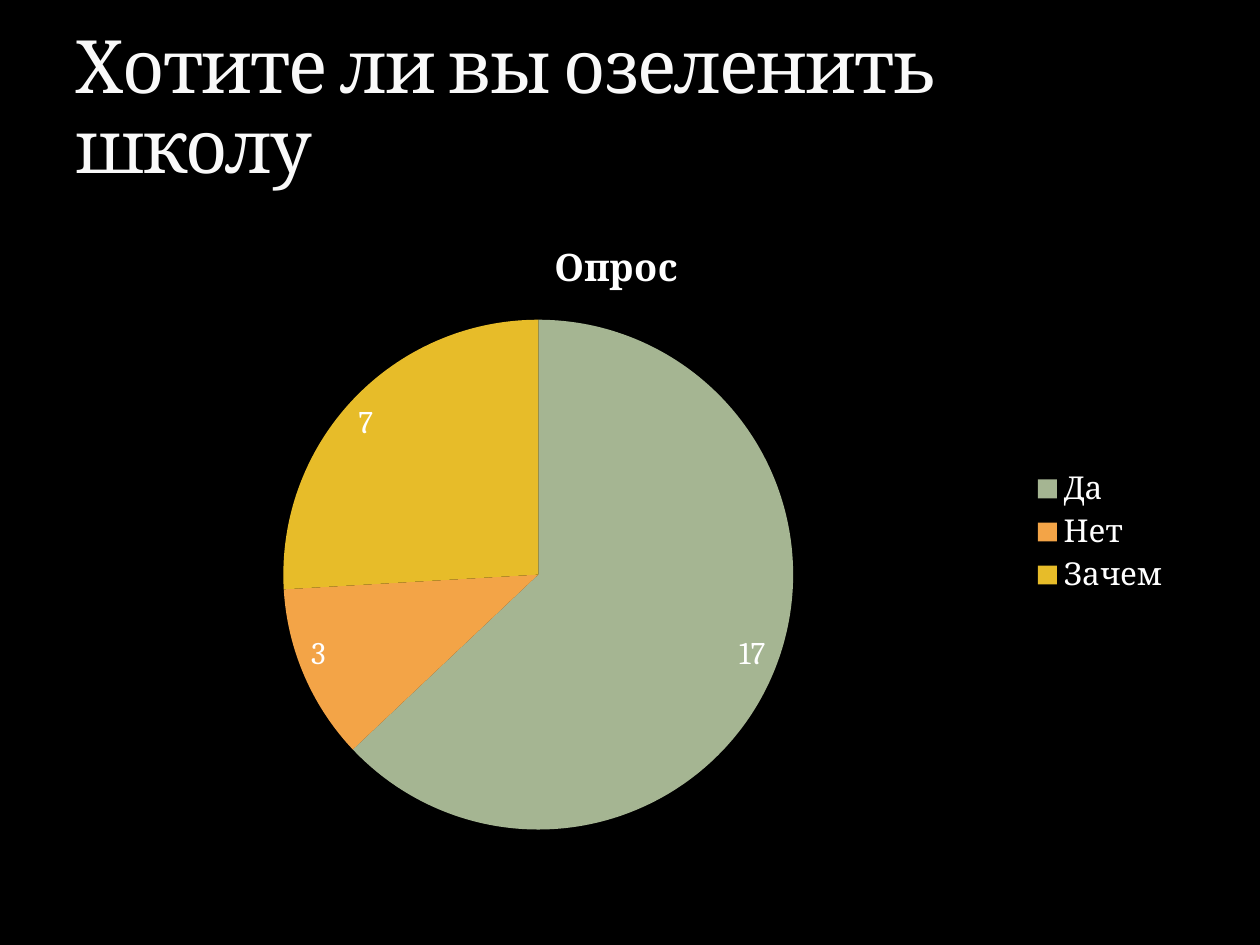
from dataclasses import dataclass

from pptx import Presentation
from pptx.chart.data import CategoryChartData
from pptx.dml.color import RGBColor
from pptx.enum.chart import XL_CHART_TYPE, XL_LABEL_POSITION, XL_LEGEND_POSITION
from pptx.enum.text import MSO_ANCHOR, MSO_AUTO_SIZE, PP_ALIGN
from pptx.util import Pt

FONT = "Cambria"
COLORS = {
    "back": "000000",
    "title": "F9F9F9",
    "text": "FFFFFF",
    "green": "A5B592",
    "orange": "F3A447",
    "gold": "E7BC29",
}


@dataclass
class Slice:
    name: str
    votes: int
    color: str


SLICES = [
    Slice("Да", 17, "green"),
    Slice("Нет", 3, "orange"),
    Slice("Зачем", 7, "gold"),
]


def rgb(name: str) -> RGBColor:
    return RGBColor.from_string(COLORS[name])


def style(font, size: float, color: str, bold: bool = False) -> None:
    font.name = FONT
    font.size = Pt(size)
    font.bold = bold
    font.color.rgb = rgb(color)


def add_title(slide, text: str) -> None:
    title = slide.shapes.title
    title.left, title.top = Pt(36), Pt(12.24)
    title.width, title.height = Pt(648), Pt(95.76)
    frame = title.text_frame
    frame.text = text
    frame.word_wrap = True
    frame.auto_size = MSO_AUTO_SIZE.NONE
    frame.vertical_anchor = MSO_ANCHOR.BOTTOM
    frame.margin_bottom = 0
    para = frame.paragraphs[0]
    para.alignment = PP_ALIGN.LEFT
    para.line_spacing = 0.9
    style(para.font, 42, "title")
    # Letter spacing is in hundredths of a point
    para.runs[0]._r.get_or_add_rPr().set("spc", "-100")


def add_pie(slide, name: str, slices: list[Slice]) -> None:
    data = CategoryChartData()
    data.categories = [part.name for part in slices]
    data.add_series(name, [part.votes for part in slices])
    chart = slide.shapes.add_chart(
        XL_CHART_TYPE.PIE, Pt(28), Pt(124), Pt(648), Pt(360), data
    ).chart
    style(chart.font, 18, "text")

    chart.has_title = True
    frame = chart.chart_title.text_frame
    frame.text = name
    style(frame.paragraphs[0].font, 21.6, "text", bold=True)

    chart.has_legend = True
    chart.legend.position = XL_LEGEND_POSITION.RIGHT
    chart.legend.include_in_layout = False

    plot = chart.plots[0]
    plot.vary_by_categories = True
    plot.has_data_labels = True
    labels = plot.data_labels
    labels.show_value = True
    labels.show_percentage = False
    labels.position = XL_LABEL_POSITION.INSIDE_END
    style(labels.font, 18, "text")
    for i, part in enumerate(slices):
        fill = plot.series[0].points[i].format.fill
        fill.solid()
        fill.fore_color.rgb = rgb(part.color)


def main() -> None:
    deck = Presentation()
    deck.slide_width, deck.slide_height = Pt(720), Pt(540)
    slide = deck.slides.add_slide(deck.slide_layouts[5])
    slide.background.fill.solid()
    slide.background.fill.fore_color.rgb = rgb("back")
    add_pie(slide, "Опрос", SLICES)
    add_title(slide, "Хотите ли вы озеленить школу")
    deck.save("out.pptx")


if __name__ == "__main__":
    main()
